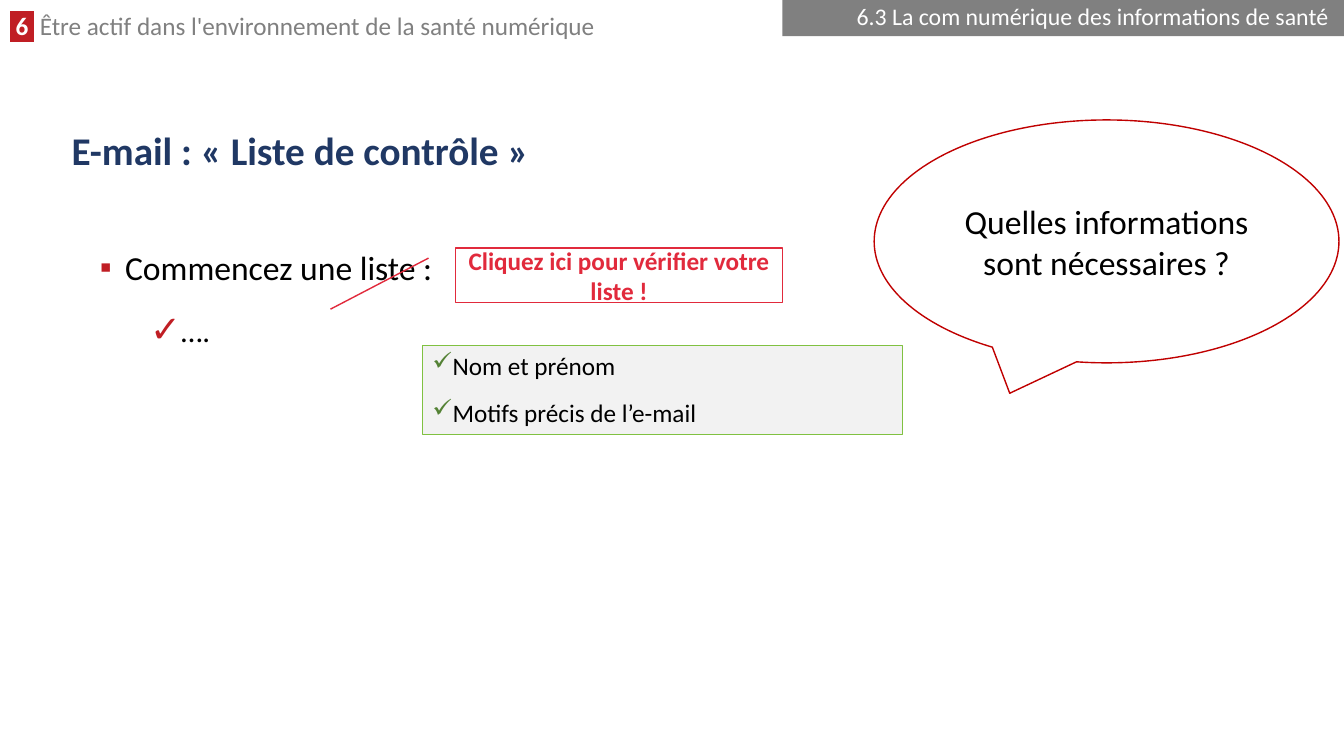
"""Build the e-mail checklist slide."""
from lxml import etree
from pptx import Presentation
from pptx.dml.color import RGBColor
from pptx.enum import shapes, text
from pptx.oxml import ns
from pptx.util import Inches, Pt

WHITE = RGBColor(0xFF, 0xFF, 0xFF)
BLACK = RGBColor(0, 0, 0)
GRAY = RGBColor(0x80, 0x80, 0x80)
PALE_GRAY = RGBColor(0xF2, 0xF2, 0xF2)
NAVY = RGBColor(0x20, 0x38, 0x64)
CRIMSON = RGBColor(0xC0, 0x1E, 0x24)
DARK_RED = RGBColor(0xC0, 0, 0)
BRIGHT_RED = RGBColor(0xE1, 0x2A, 0x3C)
GREEN = RGBColor(0x54, 0x82, 0x35)
LIGHT_GREEN = RGBColor(0x80, 0xC1, 0x41)

CHAPTER_NUMBER = " 6 "
CHAPTER_NAME = " Être actif dans l'environnement de la santé numérique"
SECTION = "6.3 La com numérique des informations de santé "
TITLE = "E-mail : « Liste de contrôle »"
QUESTION = "Quelles informations sont nécessaires ?"
HINT = "Cliquez ici pour vérifier votre liste !"
STEPS = [("Commencez une liste :", 0, 0.25, "▪", 100, 24), ("….", 1, 0.75, "✓", 120, 22)]
CHECKLIST = ["Nom et prénom", "Motifs précis de l’e-mail"]

LEFT, CENTER, RIGHT = text.PP_ALIGN.LEFT, text.PP_ALIGN.CENTER, text.PP_ALIGN.RIGHT
SHAPE = shapes.MSO_SHAPE


def style(font, size, color, bold=False):
    font.name, font.size, font.bold = "Calibri", Pt(size), bold
    font.color.rgb = color


def place(shape, left, top, width, height):
    shape.left, shape.top = Inches(left), Inches(top)
    shape.width, shape.height = Inches(width), Inches(height)


def add_box(slide, kind, box, fill, line=None, line_width=1):
    shape = slide.shapes.add_shape(kind, *map(Inches, box))
    shape.shadow.inherit = False
    shape.fill.solid()
    shape.fill.fore_color.rgb = fill
    if line is None:
        shape.line.fill.background()
    else:
        shape.line.color.rgb = line
        shape.line.width = Pt(line_width)
    return shape


def write(shape, words, size, color, align, bold=False):
    frame = shape.text_frame
    frame.text, frame.word_wrap = words, True
    frame.vertical_anchor = text.MSO_ANCHOR.MIDDLE
    paragraph = frame.paragraphs[0]
    paragraph.alignment = align
    style(paragraph.runs[0].font, size, color, bold)
    return paragraph


def add_bullet(paragraph, symbol, color, margin, hanging, percent=100):
    properties = paragraph._p.get_or_add_pPr()
    properties.set("marL", str(Inches(margin)))
    properties.set("indent", str(-Inches(hanging)))
    bullet_color = etree.SubElement(properties, ns.qn("a:buClr"))
    etree.SubElement(bullet_color, ns.qn("a:srgbClr"), val=str(color))
    etree.SubElement(properties, ns.qn("a:buSzPct"), val=str(percent * 1000))
    etree.SubElement(properties, ns.qn("a:buChar"), char=symbol)


def space(paragraph, index):
    paragraph.space_before = Pt(6 if index else 0)
    paragraph.space_after = Pt(6)


def add_header(slide):
    header = slide.shapes.add_textbox(*map(Inches, (0, 0.11, 9.52, 0.35)))
    header.text_frame.word_wrap = True
    paragraph = header.text_frame.paragraphs[0]
    paragraph.line_spacing = 0.8
    number, name = paragraph.add_run(), paragraph.add_run()
    number.text, name.text = CHAPTER_NUMBER, CHAPTER_NAME
    style(number.font, 18, WHITE, True)
    style(name.font, 18, GRAY)
    highlight = etree.Element(ns.qn("a:highlight"))
    etree.SubElement(highlight, ns.qn("a:srgbClr"), val=str(CRIMSON))
    number._r.rPr.find(ns.qn("a:solidFill")).addnext(highlight)

    tab = add_box(slide, SHAPE.RECTANGLE, (7.76, 0, 5.57, 0.36), GRAY)
    write(tab, SECTION, 17, WHITE, RIGHT).line_spacing = 0.9


def add_steps(body):
    place(body, 0.89, 2.32, 7.95, 4.7)
    frame = body.text_frame
    frame.text = "\n".join(step[0] for step in STEPS)
    frame.auto_size = text.MSO_AUTO_SIZE.NONE
    for index, (paragraph, step) in enumerate(zip(frame.paragraphs, STEPS)):
        _, paragraph.level, margin, symbol, percent, size = step
        add_bullet(paragraph, symbol, CRIMSON, margin, 0.25, percent)
        paragraph.line_spacing = 1.2
        space(paragraph, index)
        style(paragraph.runs[0].font, size, BLACK)


def add_checklist(slide):
    box = add_box(slide, SHAPE.RECTANGLE, (4.19, 3.43, 4.76, 0.88), PALE_GRAY, LIGHT_GREEN, 0.75)
    frame = box.text_frame
    frame.text, frame.word_wrap = "\n".join(CHECKLIST), True
    frame.vertical_anchor = text.MSO_ANCHOR.TOP
    for index, paragraph in enumerate(frame.paragraphs):
        add_bullet(paragraph, "✓", GREEN, 0.2, 0.2)
        paragraph.level, paragraph.alignment = 1, LEFT
        space(paragraph, index)
        style(paragraph.runs[0].font, 18, BLACK)


def main():
    presentation = Presentation()
    presentation.slide_width, presentation.slide_height = Inches(13.33), Inches(7.5)
    slide = presentation.slides.add_slide(presentation.slide_layouts[1])

    title = slide.shapes.title
    place(title, 0.61, 1.19, 12.1, 0.66)
    write(title, TITLE, 28, NAVY, LEFT, True).line_spacing = 0.9
    add_steps(slide.placeholders[1])
    add_header(slide)

    bubble = add_box(slide, SHAPE.OVAL_CALLOUT, (8.67, 1.19, 4.61, 2.41), WHITE, DARK_RED)
    write(bubble, QUESTION, 24, BLACK, CENTER)
    add_checklist(slide)
    hint = add_box(slide, SHAPE.LINE_CALLOUT_1, (4.52, 2.46, 3.24, 0.54), WHITE, BRIGHT_RED)
    write(hint, HINT, 18, BRIGHT_RED, CENTER, True)
    presentation.save("out.pptx")


if __name__ == "__main__":
    main()
